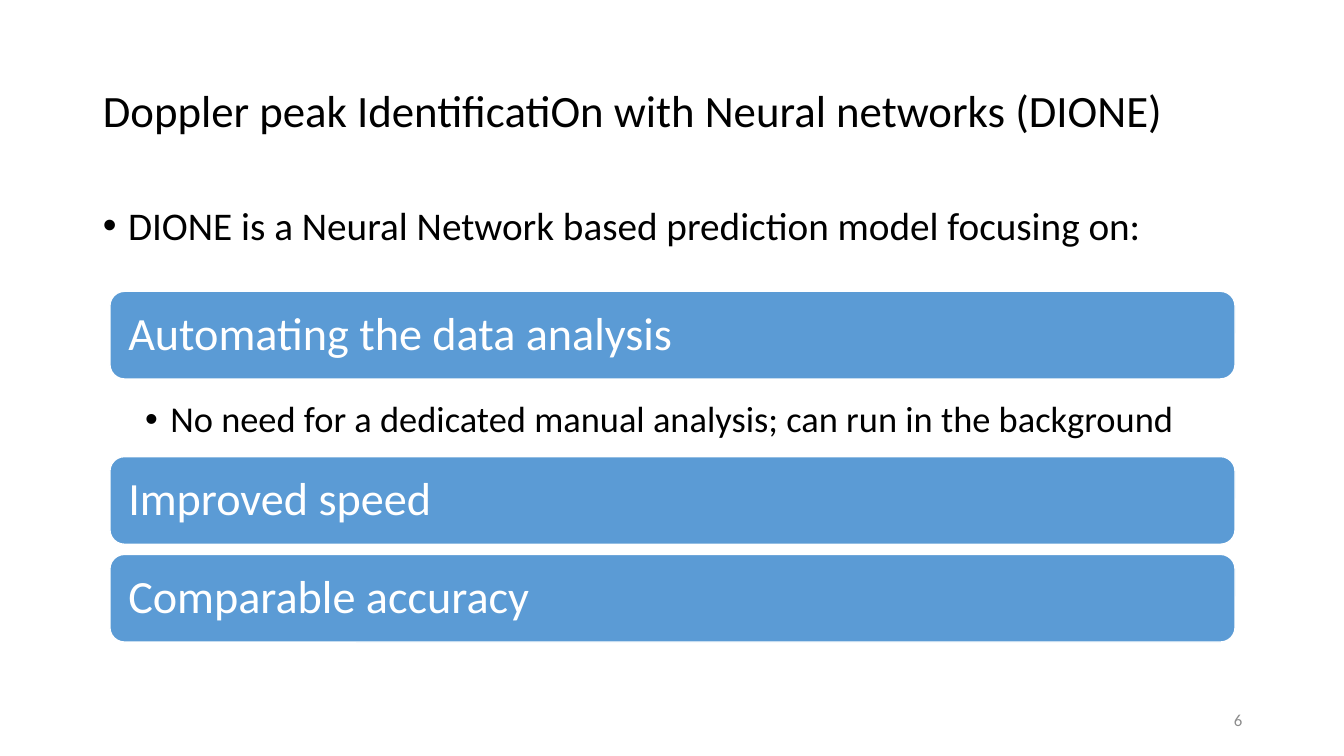
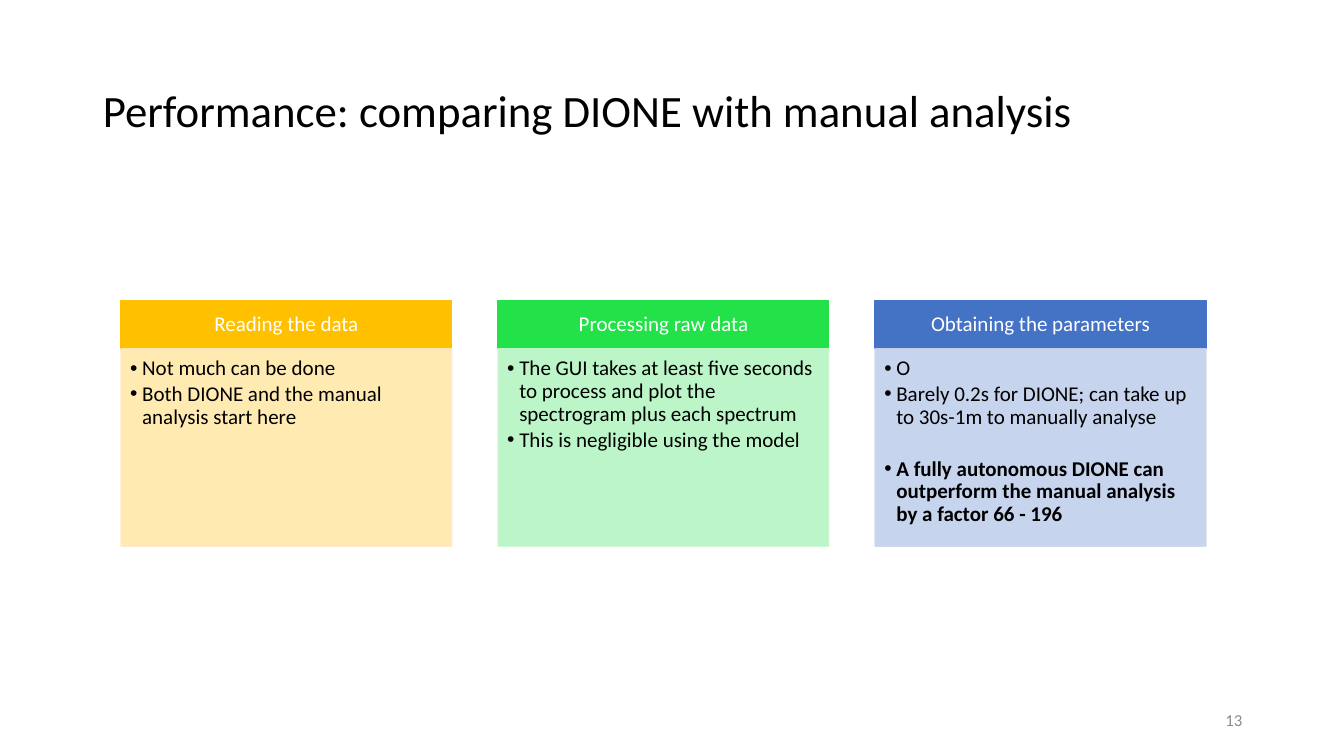
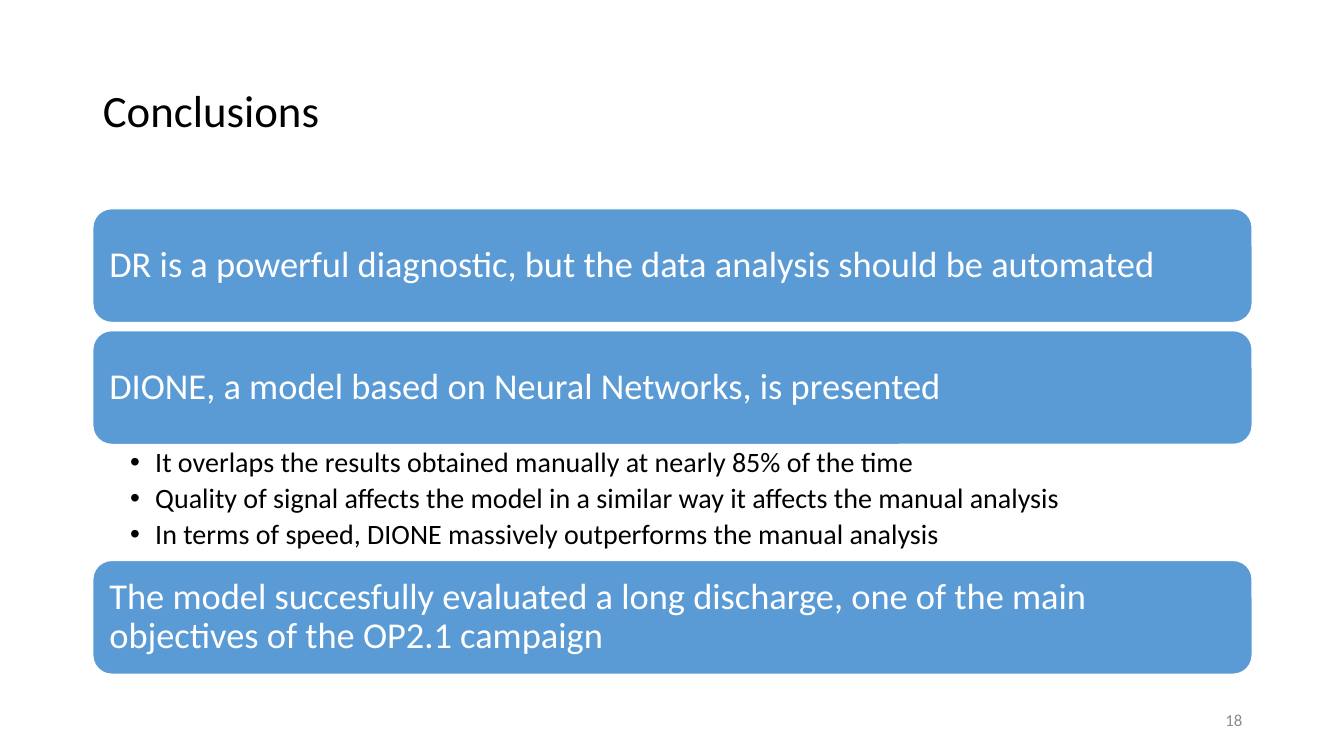
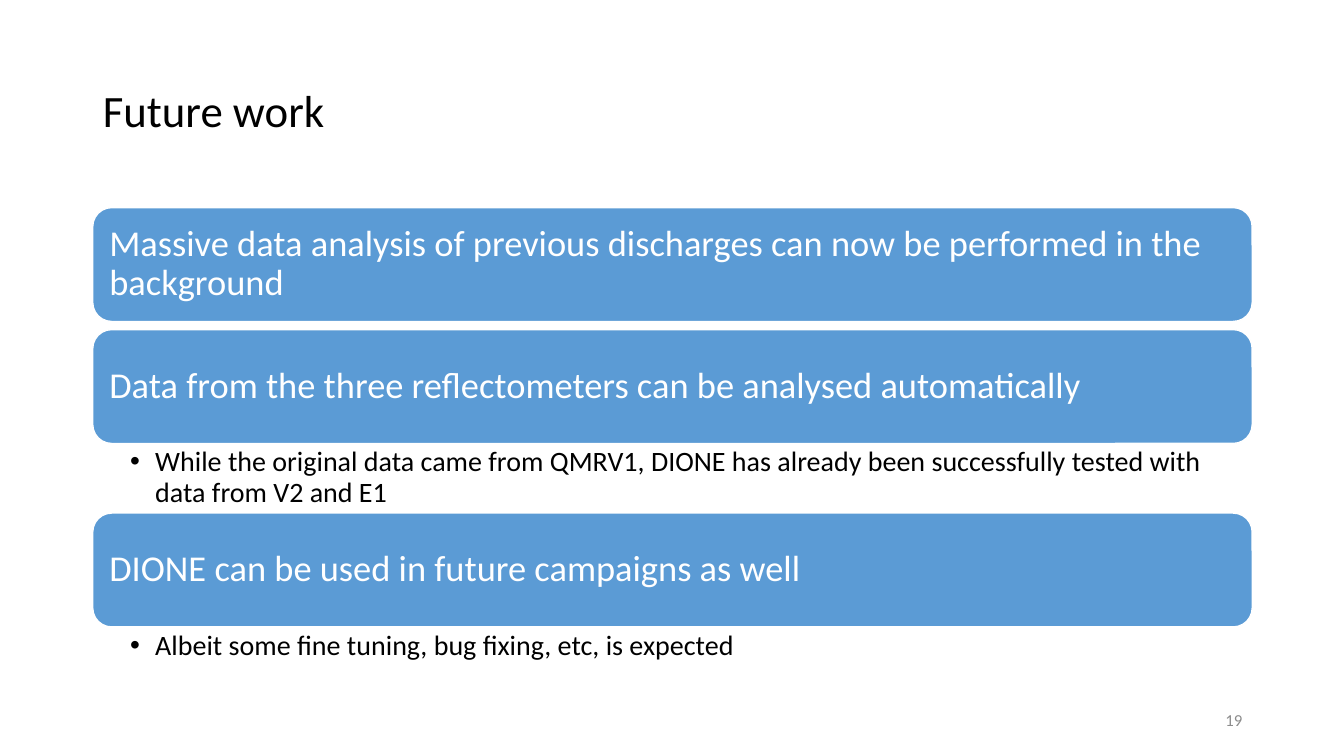
"""Build four slides about the DIONE peak identification model."""
import pptx
import pptx.dml.color
import pptx.enum.shapes
import pptx.enum.text
import pptx.oxml.ns
import pptx.util
from lxml import etree

Inches = pptx.util.Inches
Pt = pptx.util.Pt
SHAPE = pptx.enum.shapes.MSO_SHAPE
ALIGN = pptx.enum.text.PP_ALIGN
ANCHOR = pptx.enum.text.MSO_ANCHOR

FONT = "Calibri"
COLORS = {
    "text": "000000", "white": "FFFFFF", "number": "8C8C8C", "bar": "5B9BD5",
    "amber": "FFC000", "amber_edge": "FFE8CC",
    "green": "23E148", "green_edge": "CCF6D3",
    "blue": "4472C4", "blue_edge": "CFD6EA",
}
TITLE_ONLY, TITLE_BODY = 5, 1
LEFT, WIDTH = 0.92, 11.5
FOCUS_STACK = {
    "left": 1.09, "width": 11.16, "bar_height": 0.87, "gap": 0.1,
    "bar_size": 33, "bar_inset": 0.14,
    "list_size": 26, "list_inset": (0.35, 0.22, 0.26, 0.05),
}
SUMMARY_STACK = {
    "left": LEFT, "width": WIDTH, "bar_height": 1.13, "gap": 0.08,
    "bar_size": 26, "bar_inset": 0.11,
    "list_size": 20, "list_inset": (0.37, 0.04, 0.2, 0.04),
}


def rgb(name):
    """Return the named colour."""
    return pptx.dml.color.RGBColor.from_string(COLORS[name])


def place(sp, left, top, width, height):
    """Move and size a shape, in inches."""
    sp.left, sp.top = Inches(left), Inches(top)
    sp.width, sp.height = Inches(width), Inches(height)


def set_frame(sp, anchor=ANCHOR.TOP, inset=(0.1, 0.05, 0.1, 0.05)):
    """Set wrapping, anchor and insets, and return the text frame."""
    tf = sp.text_frame
    tf.word_wrap = True
    tf.auto_size = pptx.enum.text.MSO_AUTO_SIZE.NONE
    tf.vertical_anchor = anchor
    tf.margin_left, tf.margin_top, tf.margin_right, tf.margin_bottom = map(Inches, inset)
    return tf


def add_text(tf, text, size, color="text", bold=False, align=ALIGN.LEFT,
             before=0, after=0, indent=0):
    """Add a formatted paragraph, bulleted when it has an indent."""
    p = tf.paragraphs[0]
    if p.runs:
        p = tf.add_paragraph()
    p.alignment = align
    p.line_spacing = 0.9
    p.space_before, p.space_after = Pt(before), Pt(after)
    r = p.add_run()
    r.text = text
    r.font.name, r.font.size, r.font.bold = FONT, Pt(size), bold
    r.font.color.rgb = rgb(color)
    if indent:
        pPr = p._p.get_or_add_pPr()
        pPr.set("marL", str(Inches(indent)))
        pPr.set("indent", str(-Inches(indent)))
        qn = pptx.oxml.ns.qn
        etree.SubElement(pPr, qn("a:buFont"), typeface="Arial")
        etree.SubElement(pPr, qn("a:buChar"), char="•")


def set_alpha(fill_parent, percent):
    """Give the solid colour under an element an opacity."""
    qn = pptx.oxml.ns.qn
    clr = fill_parent.find(qn("a:solidFill")).find(qn("a:srgbClr"))
    etree.SubElement(clr, qn("a:alpha"), val=str(percent * 1000))


def add_box(s, kind, at, fill, line):
    """Add a filled shape with a one-point outline."""
    sp = s.shapes.add_shape(kind, *map(Inches, at))
    sp.shadow.inherit = False
    sp.fill.solid()
    sp.fill.fore_color.rgb = rgb(fill)
    sp.line.color.rgb = rgb(line)
    sp.line.width = Pt(1)
    return sp


def add_slide(prs, title, number, layout=TITLE_ONLY):
    """Add a slide with its title and page number."""
    s = prs.slides.add_slide(prs.slide_layouts[layout])
    place(s.shapes.title, LEFT, 0.4, WIDTH, 1.45)
    add_text(set_frame(s.shapes.title, ANCHOR.MIDDLE), title, 32)
    sp = s.shapes.add_textbox(Inches(9.42), Inches(6.95), Inches(3), Inches(0.4))
    add_text(set_frame(sp, ANCHOR.MIDDLE), str(number), 12, "number", align=ALIGN.RIGHT)
    return s


def add_bar(s, text, top, style):
    """Add a rounded bar with its heading."""
    at = (style["left"], top, style["width"], style["bar_height"])
    sp = add_box(s, SHAPE.ROUNDED_RECTANGLE, at, "bar", "white")
    tf = set_frame(sp, ANCHOR.MIDDLE, (style["bar_inset"],) * 4)
    add_text(tf, text, style["bar_size"], "white")


def add_list(s, items, top, height, style):
    """Add the bullets that stand under a bar."""
    at = (style["left"], top, style["width"], height)
    sp = s.shapes.add_textbox(*map(Inches, at))
    tf = set_frame(sp, inset=style["list_inset"])
    for item in items:
        add_text(tf, item, style["list_size"], after=style["list_size"] * 0.2, indent=0.25)


def add_stack(s, top, rows, style):
    """Stack bars downwards, each followed by its bullets or by a gap."""
    for heading, items, height in rows:
        add_bar(s, heading, top, style)
        top += style["bar_height"]
        if items:
            add_list(s, items, top, height, style)
        top += height if items else style["gap"]


def add_card(s, left, color, heading, items, strong=None):
    """Add a coloured heading over a tinted box of bullets."""
    width, top, head_height = 3.28, 2.98, 0.48
    sp = add_box(s, SHAPE.RECTANGLE, (left, top, width, head_height), color, color)
    tf = set_frame(sp, ANCHOR.MIDDLE, (0.12, 0.07, 0.12, 0.07))
    add_text(tf, heading, 15, "white", align=ALIGN.CENTER)
    at = (left, top + head_height, width, 1.96)
    sp = add_box(s, SHAPE.RECTANGLE, at, color, color + "_edge")
    set_alpha(sp._element.spPr, 30)
    set_alpha(sp.line._get_or_add_ln(), 90)
    tf = set_frame(sp, inset=(0.09, 0.09, 0.12, 0.13))
    for item in items:
        add_text(tf, item, 15, after=2.25, indent=0.12)
    if strong:
        add_text(tf, strong, 15, bold=True, before=18.5, indent=0.12)


def build_focus(prs):
    """Build the slide on what the model focuses on."""
    s = add_slide(prs, "Doppler peak IdentificatiOn with Neural networks (DIONE)", 6, TITLE_BODY)
    body = s.placeholders[1]
    place(body, LEFT, 2, WIDTH, 4.76)
    add_text(set_frame(body), "DIONE is a Neural Network based prediction model focusing on:",
             28, before=10, indent=0.25)
    add_stack(s, 2.89, [
        ("Automating the data analysis",
         ["No need for a dedicated manual analysis; can run in the background"], 0.77),
        ("Improved speed", [], 0),
        ("Comparable accuracy", [], 0),
    ], FOCUS_STACK)


def build_performance(prs):
    """Build the slide that compares the model with manual analysis."""
    s = add_slide(prs, "Performance: comparing DIONE with manual analysis", 13)
    cards = [
        ("amber", "Reading the data",
         ["Not much can be done", "Both DIONE and the manual analysis start here"]),
        ("green", "Processing raw data",
         ["The GUI takes at least five seconds to process and plot the spectrogram "
          "plus each spectrum", "This is negligible using the model"]),
        ("blue", "Obtaining the parameters",
         ["O", "Barely 0.2s for DIONE; can take up to 30s-1m to manually analyse"],
         "A fully autonomous DIONE can outperform the manual analysis by a factor 66 - 196"),
    ]
    for i, card in enumerate(cards):
        add_card(s, 1.2 + i * 3.74, *card)


def build_conclusions(prs):
    """Build the conclusions slide."""
    s = add_slide(prs, "Conclusions", 18)
    add_stack(s, 2.07, [
        ("DR is a powerful diagnostic, but the data analysis should be automated", [], 0),
        ("DIONE, a model based on Neural Networks, is presented",
         ["It overlaps the results obtained manually at nearly 85% of the time",
          "Quality of signal affects the model in a similar way it affects the manual analysis",
          "In terms of speed, DIONE massively outperforms the manual analysis"], 1.15),
        ("The model succesfully evaluated a long discharge, one of the main objectives "
         "of the OP2.1 campaign", [], 0),
    ], SUMMARY_STACK)


def build_future(prs):
    """Build the future work slide."""
    s = add_slide(prs, "Future work", 19)
    add_stack(s, 2.06, [
        ("Massive data analysis of previous discharges can now be performed in the background",
         [], 0),
        ("Data from the three reflectometers can be analysed automatically",
         ["While the original data came from QMRV1, DIONE has already been successfully "
          "tested with data from V2 and E1"], 0.69),
        ("DIONE can be used in future campaigns as well",
         ["Albeit some fine tuning, bug fixing, etc, is expected"], 0.47),
    ], SUMMARY_STACK)


def main():
    """Build and save the presentation."""
    prs = pptx.Presentation()
    prs.slide_width, prs.slide_height = Inches(13.33), Inches(7.5)
    build_focus(prs)
    build_performance(prs)
    build_conclusions(prs)
    build_future(prs)
    prs.save("out.pptx")


if __name__ == "__main__":
    main()
